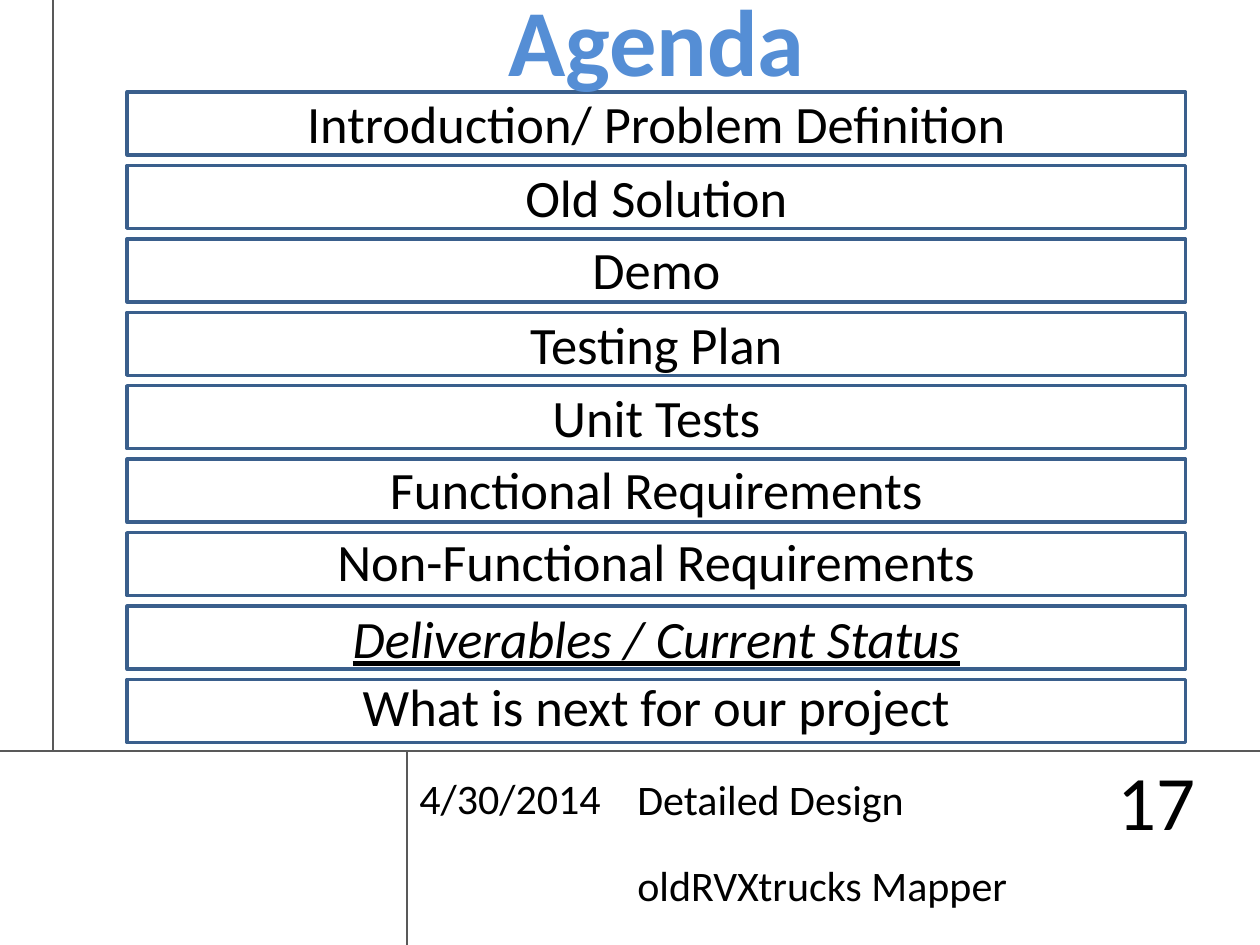
from dataclasses import dataclass
from typing import Optional

from lxml.etree import SubElement
from pptx import Presentation
from pptx.dml.color import RGBColor
from pptx.enum.shapes import MSO_CONNECTOR as Connector, MSO_SHAPE as Shape
from pptx.enum.text import MSO_ANCHOR as Anchor, PP_ALIGN as Align
from pptx.oxml.ns import qn
from pptx.util import Inches, Pt


@dataclass(frozen=True)
class Theme:
    font: str = "Calibri"
    text: RGBColor = RGBColor(0x00, 0x00, 0x00)
    title: RGBColor = RGBColor(0x55, 0x8E, 0xD5)
    fill: RGBColor = RGBColor(0xFF, 0xFF, 0xFF)
    border: RGBColor = RGBColor(0x3A, 0x5F, 0x8C)
    rule: RGBColor = RGBColor(0x59, 0x59, 0x59)
    title_size: int = 54
    number_size: int = 44
    item_size: int = 30
    footer_size: int = 24


@dataclass(frozen=True)
class Area:
    left: float
    top: float
    width: float
    height: float

    def lengths(self) -> tuple:
        return tuple(Inches(n) for n in (self.left, self.top, self.width, self.height))


@dataclass(frozen=True)
class Item:
    text: str
    caption_top: Optional[float] = None  # None: the text sits in the frame itself


@dataclass(frozen=True)
class Label:
    text: str
    area: Area
    size: int
    align: Align = Align.LEFT
    anchor: Anchor = Anchor.TOP
    margin: float = 0.05


THEME = Theme()
LEFT, WIDTH = 1.01, 8.4
FIRST_TOP, PITCH, FRAME_HEIGHT, CAPTION_HEIGHT = 0.73, 0.583, 0.5, 0.61
FOOTER_TOP = 5.96

ITEMS = [
    Item("Introduction/ Problem Definition", 0.67),
    Item("Old Solution", 1.26),
    Item("Demo", 1.83),
    Item("Testing Plan", 2.43),
    Item("Unit Tests", 3.01),
    Item("Functional Requirements", 3.58),
    Item("Non-Functional Requirements", 4.15),
    Item("Deliverables / Current Status"),
    Item("What is next for our project", 5.3),
]
FOOTER = [
    Label("4/30/2014", Area(3.23, FOOTER_TOP, 1.89, 0.74), THEME.footer_size, anchor=Anchor.MIDDLE),
    Label("Detailed Design", Area(4.96, 6.09, 4.51, 0.5), THEME.footer_size),
    Label("oldRVXtrucks Mapper", Area(4.96, 6.77, 4.51, 0.5), THEME.footer_size),
    Label("17", Area(8.38, 5.98, 1.21, 0.74), THEME.number_size, Align.RIGHT, margin=0),
]
RULES = [
    (10, FOOTER_TOP, 0, FOOTER_TOP),
    (0.42, FOOTER_TOP, 0.42, 0),
    (3.23, 7.5, 3.23, FOOTER_TOP),
]


def write(shape, label: Label, **changes) -> None:
    frame = shape.text_frame
    frame.word_wrap = True
    frame.vertical_anchor = label.anchor
    frame.margin_top = frame.margin_bottom = Inches(label.margin)
    para = frame.paragraphs[0]
    para.alignment = label.align
    span = para.add_run()
    span.text = label.text
    color = changes.pop("color", THEME.text)
    formats = {"name": THEME.font, "size": Pt(label.size), **changes}
    for key, value in formats.items():
        setattr(span.font, key, value)
    span.font.color.rgb = color


def add_label(page, label: Label, **changes) -> None:
    write(page.shapes.add_textbox(*label.area.lengths()), label, **changes)


def add_rule(page, ends: tuple) -> None:
    line = page.shapes.add_connector(Connector.STRAIGHT, *(Inches(n) for n in ends))
    line.line.color.rgb = THEME.rule
    line.line.width = Pt(0.75)
    SubElement(line._element.spPr, qn("a:effectLst"))


def add_item(page, item: Item, row: int) -> None:
    area = Area(LEFT, FIRST_TOP + row * PITCH, WIDTH, FRAME_HEIGHT)
    box = page.shapes.add_shape(Shape.RECTANGLE, *area.lengths())
    box.shadow.inherit = False
    box.fill.solid()
    box.fill.fore_color.rgb = THEME.fill
    box.line.color.rgb = THEME.border
    box.line.width = Pt(2)
    if item.caption_top is None:
        label = Label(item.text, area, THEME.item_size, Align.CENTER, Anchor.MIDDLE)
        write(box, label, italic=True, underline=True)
    else:
        caption = Area(LEFT, item.caption_top, WIDTH, CAPTION_HEIGHT)
        add_label(page, Label(item.text, caption, THEME.item_size, Align.CENTER))


def main() -> None:
    deck = Presentation()
    deck.slide_width, deck.slide_height = Inches(10), Inches(7.5)
    page = deck.slides.add_slide(deck.slide_layouts[6])

    # Dividing rules and footer
    for ends in RULES:
        add_rule(page, ends)
    for label in FOOTER:
        add_label(page, label)

    # Agenda rows
    for row, item in enumerate(ITEMS):
        add_item(page, item, row)

    # Title
    title = Label("Agenda", Area(0.42, -0.19, 9.58, 1.01), THEME.title_size, Align.CENTER)
    add_label(page, title, bold=True, color=THEME.title)

    deck.save("out.pptx")


if __name__ == "__main__":
    main()
